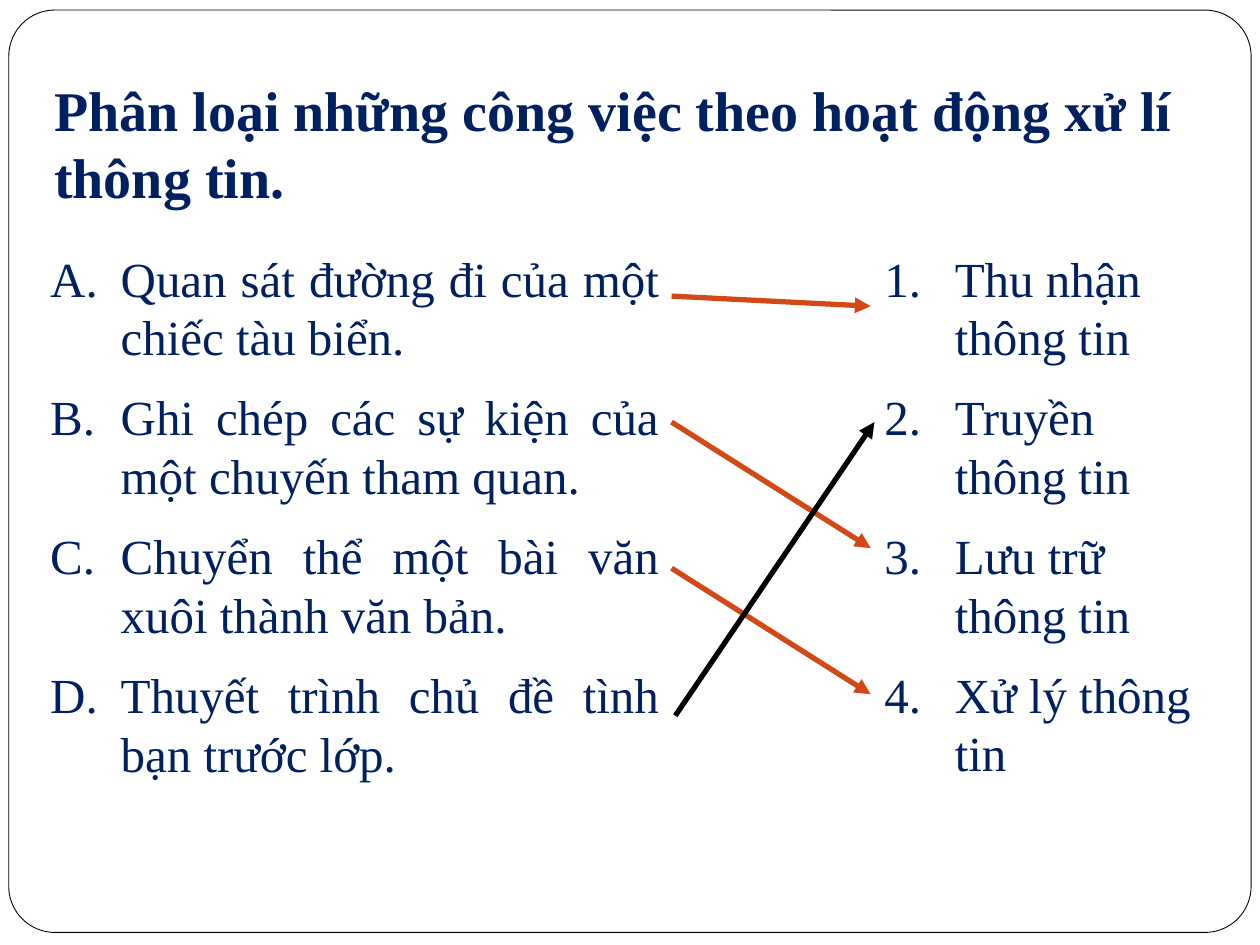
from dataclasses import dataclass

from lxml import etree
from pptx import Presentation
from pptx.dml.color import RGBColor
from pptx.enum.shapes import MSO_CONNECTOR, MSO_SHAPE
from pptx.enum.text import MSO_ANCHOR, MSO_AUTO_SIZE, PP_ALIGN
from pptx.oxml.ns import qn
from pptx.util import Pt

EMU_PER_PX = 9144  # 100 px to the inch
ROUNDED = MSO_SHAPE.ROUNDED_RECTANGLE
STRAIGHT = MSO_CONNECTOR.STRAIGHT
TOP = MSO_ANCHOR.TOP
FIT_SHAPE = MSO_AUTO_SIZE.SHAPE_TO_FIT_TEXT
LEFT, JUSTIFY = PP_ALIGN.LEFT, PP_ALIGN.JUSTIFY


@dataclass(frozen=True)
class Theme:
    font: str = "Times New Roman"
    navy: str = "002060"
    orange: str = "D34817"
    black: str = "000000"
    white: str = "FFFFFF"
    title_size: int = 32
    body_size: int = 28
    frame_width: float = 0.5
    arrow_width: int = 3


def px(value):
    return value * EMU_PER_PX


def color(value):
    return RGBColor.from_string(value)


def write_text(paragraph, text, *, theme, size, bold=False, align=LEFT):
    paragraph.alignment = align
    run = paragraph.add_run()
    run.text = text
    run.font.name = theme.font
    run.font.size = Pt(size)
    run.font.bold = bold
    run.font.color.rgb = color(theme.navy)


class SlideBuilder:
    def __init__(self, slide, theme):
        self.slide = slide
        self.theme = theme

    def prepare_frame(self, text_frame):
        text_frame.word_wrap = True
        text_frame.auto_size = FIT_SHAPE
        text_frame.vertical_anchor = TOP

    def title(self, text, left, top, width, height):
        shape = self.slide.shapes.title
        shape.left, shape.top = px(left), px(top)
        shape.width, shape.height = px(width), px(height)
        self.prepare_frame(shape.text_frame)
        write_text(shape.text_frame.paragraphs[0], text, theme=self.theme,
                   size=self.theme.title_size, bold=True)

    def border(self, left, top, width, height):
        shape = self.slide.shapes.add_shape(
            ROUNDED, px(left), px(top), px(width), px(height))
        shape.adjustments[0] = 0.05
        shape.shadow.inherit = False
        shape.fill.solid()
        shape.fill.fore_color.rgb = color(self.theme.white)
        shape.line.color.rgb = color(self.theme.black)
        shape.line.width = Pt(self.theme.frame_width)
        # The border lies behind the title
        self.slide.shapes.title.element.addprevious(shape.element)

    def numbered_list(self, items, left, top, width, height, *,
                      numbering, align=LEFT, before=0, after=0, indent=56):
        box = self.slide.shapes.add_textbox(
            px(left), px(top), px(width), px(height))
        frame = box.text_frame
        self.prepare_frame(frame)
        for index, item in enumerate(items):
            paragraph = frame.add_paragraph() if index else frame.paragraphs[0]
            properties = paragraph._p.get_or_add_pPr()
            properties.set("marL", str(px(indent)))
            properties.set("indent", str(px(-indent)))
            bullet = etree.SubElement(properties, qn("a:buAutoNum"))
            bullet.set("type", numbering)
            paragraph.space_before = Pt(before if index else 0)
            paragraph.space_after = Pt(after)
            write_text(paragraph, item, theme=self.theme,
                       size=self.theme.body_size, align=align)

    def arrow(self, start, end, line_color):
        connector = self.slide.shapes.add_connector(
            STRAIGHT, *map(px, start), *map(px, end))
        connector.line.color.rgb = color(line_color)
        connector.line.width = Pt(self.theme.arrow_width)
        head = etree.SubElement(connector.line._get_or_add_ln(), qn("a:tailEnd"))
        head.set("type", "triangle")
        etree.SubElement(connector.element.spPr, qn("a:effectLst"))


def main():
    theme = Theme()
    presentation = Presentation()
    presentation.slide_width, presentation.slide_height = px(1000), px(750)
    title_only = presentation.slide_layouts[5]
    builder = SlideBuilder(presentation.slides.add_slide(title_only), theme)

    # Border and title
    builder.border(7, 8, 986, 732)
    builder.title("Phân loại những công việc theo hoạt động xử lí thông tin.",
                  33, 55, 942, 118)

    # Tasks on the left, kinds of processing on the right
    builder.numbered_list(
        ["Quan sát đường đi của một chiếc tàu biển.",
         "Ghi chép các sự kiện của một chuyến tham quan.",
         "Chuyển thể một bài văn xuôi thành văn bản.",
         "Thuyết trình chủ đề tình bạn trước lớp."],
        30, 192, 503, 438, numbering="alphaUcPeriod",
        align=JUSTIFY, before=6, after=6)
    builder.numbered_list(
        ["Thu nhận thông tin", "Truyền thông tin",
         "Lưu trữ thông tin", "Xử lý thông tin"],
        692, 192, 267, 438, numbering="arabicPeriod", before=12)

    # Arrows that match each task to its kind
    for start, end, line_color in [
        ((533, 235), (691, 243), theme.orange),
        ((533, 335), (691, 435), theme.orange),
        ((533, 451), (691, 551), theme.orange),
        ((536, 568), (694, 335), theme.black),
    ]:
        builder.arrow(start, end, line_color)

    presentation.save("out.pptx")


if __name__ == "__main__":
    main()
